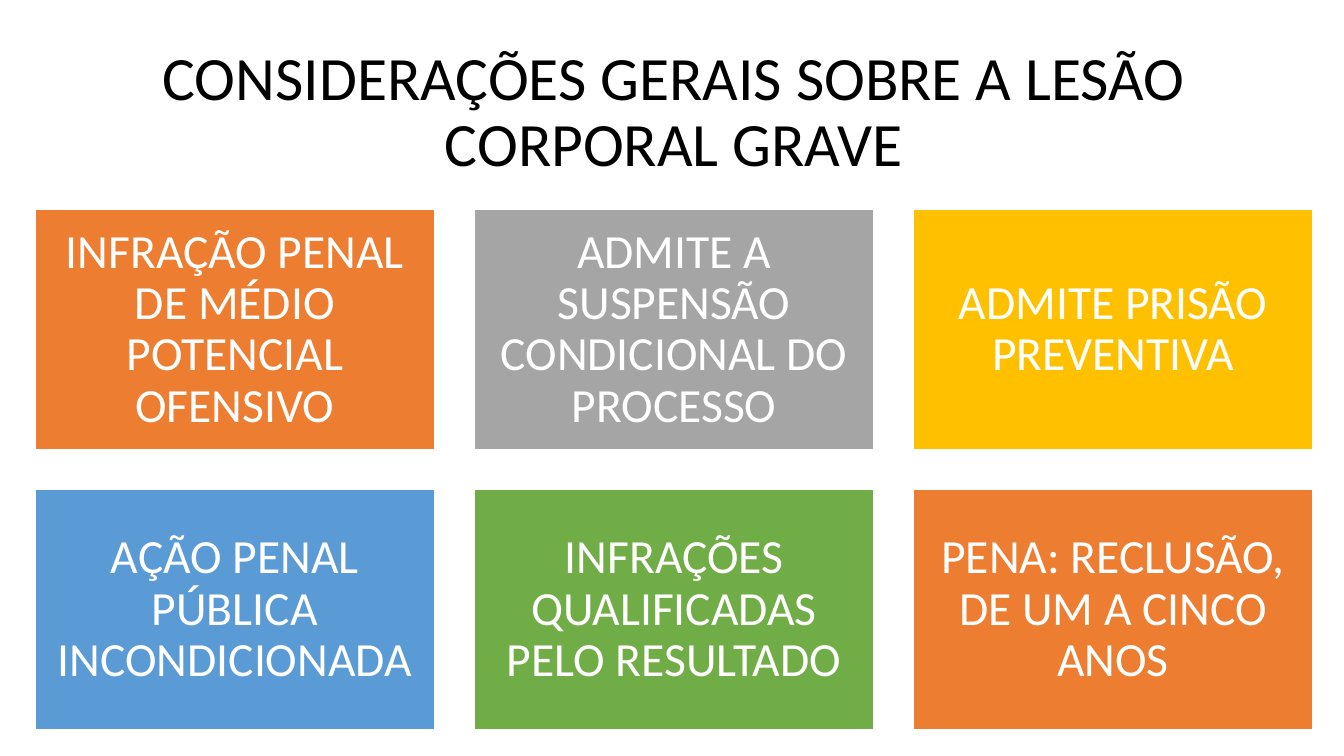
from pptx import Presentation
from pptx.dml.color import RGBColor
from pptx.enum.shapes import MSO_SHAPE
from pptx.enum.text import MSO_ANCHOR, MSO_AUTO_SIZE, PP_ALIGN
from pptx.util import Pt

RECTANGLE = MSO_SHAPE.RECTANGLE
MIDDLE = MSO_ANCHOR.MIDDLE
CENTER = PP_ALIGN.CENTER
NO_AUTOFIT = MSO_AUTO_SIZE.NONE
TITLE_ONLY = 5

FONT = "Calibri"
COLORS = {
    "black": "000000",
    "white": "FFFFFF",
    "orange": "ED7D31",
    "gray": "A5A5A5",
    "gold": "FFC000",
    "blue": "5B9BD5",
    "green": "70AD47",
}

TITLE = "CONSIDERAÇÕES GERAIS SOBRE A LESÃO CORPORAL GRAVE"
CARDS = [
    ("INFRAÇÃO PENAL DE MÉDIO POTENCIAL OFENSIVO", "orange"),
    ("ADMITE A SUSPENSÃO CONDICIONAL DO PROCESSO", "gray"),
    ("ADMITE PRISÃO PREVENTIVA", "gold"),
    ("AÇÃO PENAL PÚBLICA INCONDICIONADA", "blue"),
    ("INFRAÇÕES QUALIFICADAS PELO RESULTADO", "green"),
    ("PENA: RECLUSÃO, DE UM A CINCO ANOS", "orange"),
]

COLUMNS = 3
LEFT, TOP = 25.2, 149.8
CARD_WIDTH, CARD_HEIGHT = 285.1, 171.4
GAP = 28.6
CARD_INSET = 10.1


def color(name):
    return RGBColor.from_string(COLORS[name])


def place(shape, left, top, width, height):
    shape.left, shape.top = Pt(left), Pt(top)
    shape.width, shape.height = Pt(width), Pt(height)


def write_text(shape, text, size, color_name):
    frame = shape.text_frame
    frame.text = text
    frame.word_wrap = True
    frame.auto_size = NO_AUTOFIT
    frame.vertical_anchor = MIDDLE
    paragraph = frame.paragraphs[0]
    paragraph.alignment = CENTER
    paragraph.line_spacing = 0.9
    font = paragraph.runs[0].font
    font.name = FONT
    font.size = Pt(size)
    font.color.rgb = color(color_name)


def add_title(slide):
    title = slide.shapes.title
    place(title, LEFT, 28.8, 913, 104.4)
    write_text(title, TITLE, 44, "black")


def add_card(slide, index, text, fill_name):
    row, column = divmod(index, COLUMNS)
    left = LEFT + column * (CARD_WIDTH + GAP)
    top = TOP + row * (CARD_HEIGHT + GAP)
    card = slide.shapes.add_shape(
        RECTANGLE, Pt(left), Pt(top), Pt(CARD_WIDTH), Pt(CARD_HEIGHT)
    )
    card.shadow.inherit = False
    card.fill.solid()
    card.fill.fore_color.rgb = color(fill_name)
    card.line.color.rgb = color("white")
    card.line.width = Pt(1)
    frame = card.text_frame
    frame.margin_left = frame.margin_right = Pt(CARD_INSET)
    frame.margin_top = frame.margin_bottom = Pt(CARD_INSET)
    write_text(card, text, 34, "white")


def main():
    presentation = Presentation()
    presentation.slide_width = Pt(960)
    presentation.slide_height = Pt(540)
    slide = presentation.slides.add_slide(presentation.slide_layouts[TITLE_ONLY])
    add_title(slide)
    for index, (text, fill_name) in enumerate(CARDS):
        add_card(slide, index, text, fill_name)
    presentation.save("out.pptx")


if __name__ == "__main__":
    main()
